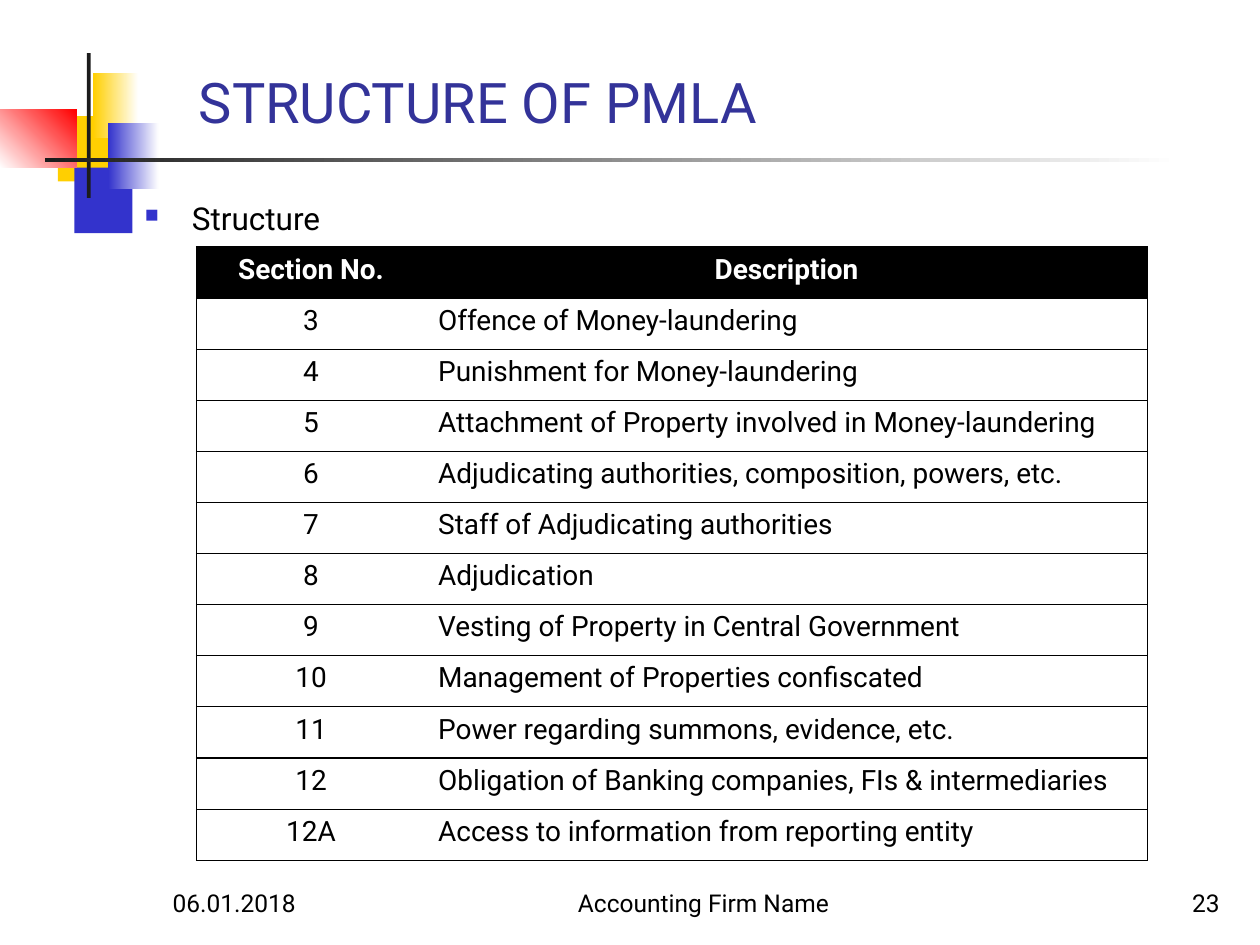
from dataclasses import dataclass
from typing import Optional

import pptx
import pptx.dml.color
import pptx.enum.shapes
import pptx.enum.text
import pptx.oxml
import pptx.oxml.ns
import pptx.util
from pptx.util import Cm, Pt

ALIGN = pptx.enum.text.PP_ALIGN
ANCHOR = pptx.enum.text.MSO_ANCHOR


@dataclass(frozen=True)
class Theme:
    font: str = "Roboto"
    black: str = "000000"
    white: str = "FFFFFF"
    charcoal: str = "1C1C1C"
    yellow: str = "FFCF01"
    blue: str = "3333CC"
    red: str = "FF0000"
    heading: str = "333399"
    title_size: int = 32
    body_size: int = 18
    table_size: int = 16
    footer_size: int = 14
    border: float = 0.75


THEME = Theme()


@dataclass(frozen=True)
class Box:
    left: float
    top: float
    width: float
    height: float

    def lengths(self) -> tuple:
        return Cm(self.left), Cm(self.top), Cm(self.width), Cm(self.height)


@dataclass(frozen=True)
class Block:
    box: Box
    color: str
    fade_to: Optional[str] = None
    angle: float = 0


@dataclass(frozen=True)
class Footer:
    text: str
    left: float
    width: float
    align: ALIGN


BLOCKS = [
    Block(Box(1.17, 2.34, 1.22, 1.32), THEME.yellow),
    Block(Box(1.5, 3.38, 1.17, 1.32), THEME.blue),
    Block(Box(1.88, 1.47, 0.91, 1.32), THEME.yellow, THEME.white),
    Block(Box(2.18, 2.49, 1.02, 1.32), THEME.blue, THEME.white),
    Block(Box(0, 2.21, 1.55, 1.17), THEME.white, THEME.red, 45),
    Block(Box(1.75, 1.07, 0.08, 2.92), THEME.charcoal),
    Block(Box(0.91, 3.18, 22.86, 0.08), THEME.charcoal, THEME.white),
]

FOOTERS = [
    Footer("06.01.2018", 3.23, 5.28, ALIGN.LEFT),
    Footer("Accounting Firm Name", 10.16, 8.05, ALIGN.CENTER),
    Footer("23", 19.56, 5.28, ALIGN.RIGHT),
]

SECTIONS = [
    ("Section No.", "Description"),
    ("3", "Offence of Money-laundering"),
    ("4", "Punishment for Money-laundering"),
    ("5", "Attachment of Property involved in Money-laundering"),
    ("6", "Adjudicating authorities, composition, powers, etc."),
    ("7", "Staff of Adjudicating authorities"),
    ("8", "Adjudication"),
    ("9", "Vesting of Property in Central Government"),
    ("10", "Management of Properties confiscated"),
    ("11", "Power regarding summons, evidence, etc."),
    ("12", "Obligation of Banking companies, FIs & intermediaries"),
    ("12A", "Access to information from reporting entity"),
]
COLUMN_WIDTHS = (4.62, 14.55)
ROW_HEIGHT = 1.03


def rgb(color: str) -> pptx.dml.color.RGBColor:
    return pptx.dml.color.RGBColor.from_string(color)


def xml(markup: str):
    return pptx.oxml.parse_xml(markup.replace(" ", f" {pptx.oxml.ns.nsdecls('a')} ", 1))


def write(frame, text: str, *, size: float, color: str = THEME.black,
          bold: bool = False, align: ALIGN = ALIGN.LEFT):
    """Put formatted text in the first paragraph and return that paragraph."""
    paragraph = frame.paragraphs[0]
    paragraph.alignment = align
    run = paragraph.add_run()
    run.text = text
    run.font.name = THEME.font
    run.font.size = Pt(size)
    run.font.bold = bold
    run.font.color.rgb = rgb(color)
    return paragraph


def add_text(slide, box: Box, text: str, anchor: ANCHOR = ANCHOR.BOTTOM, **text_format):
    frame = slide.shapes.add_textbox(*box.lengths()).text_frame
    frame.word_wrap = True
    frame.vertical_anchor = anchor
    return write(frame, text, **text_format)


def add_block(slide, block: Block) -> None:
    shape = slide.shapes.add_shape(
        pptx.enum.shapes.MSO_SHAPE.RECTANGLE, *block.box.lengths())
    shape.shadow.inherit = False
    shape.line.fill.background()
    if block.fade_to is None:
        shape.fill.solid()
        shape.fill.fore_color.rgb = rgb(block.color)
        return
    shape.fill.gradient()
    shape.fill.gradient_angle = block.angle
    for stop, color in zip(shape.fill.gradient_stops, (block.color, block.fade_to)):
        stop.color.rgb = rgb(color)


def add_bullet(paragraph, color: str) -> None:
    properties = paragraph._p.get_or_add_pPr()
    properties.set("marL", str(Cm(0.95)))
    properties.set("indent", str(-Cm(0.95)))
    for markup in (f'<a:buClr ><a:srgbClr val="{color}"/></a:buClr>',
                   '<a:buSzPct val="60000"/>',
                   '<a:buChar char="■"/>'):
        properties.append(xml(markup))


def set_borders(cell, visible: str) -> None:
    """Draw the sides named in visible (L, R, T, B) and clear the others."""
    properties = cell._tc.get_or_add_tcPr()
    for index, side in enumerate("LRTB"):
        paint = (f'<a:solidFill><a:srgbClr val="{THEME.black}"/></a:solidFill>'
                 if side in visible else "<a:noFill/>")
        properties.insert(index, xml(
            f'<a:ln{side} w="{Pt(THEME.border)}">{paint}</a:ln{side}>'))


def add_sections(slide) -> None:
    box = Box(3.96, 4.98, sum(COLUMN_WIDTHS), ROW_HEIGHT * len(SECTIONS))
    table = slide.shapes.add_table(
        len(SECTIONS), len(COLUMN_WIDTHS), *box.lengths()).table
    for column, width in zip(table.columns, COLUMN_WIDTHS):
        column.width = Cm(width)
    for row_index, section in enumerate(SECTIONS):
        table.rows[row_index].height = Cm(ROW_HEIGHT)
        header = row_index == 0
        for column_index, text in enumerate(section):
            cell = table.cell(row_index, column_index)
            if header:
                cell.fill.solid()
                cell.fill.fore_color.rgb = rgb(THEME.black)
            else:
                cell.fill.background()
            set_borders(cell, "LTB" if column_index == 0 else "RTB")
            centred = header or column_index == 0
            write(cell.text_frame, text, size=THEME.table_size, bold=header,
                  color=THEME.white if header else THEME.black,
                  align=ALIGN.CENTER if centred else ALIGN.LEFT)


def main() -> None:
    deck = pptx.Presentation()
    deck.slide_width, deck.slide_height = Cm(25.4), Cm(19.05)
    slide = deck.slides.add_slide(deck.slide_layouts[6])

    # Corner decoration
    for block in BLOCKS:
        add_block(slide, block)

    # Heading and lead line
    add_text(slide, Box(3.76, 1.27, 21.64, 1.57), "STRUCTURE OF PMLA",
             size=THEME.title_size, color=THEME.heading)
    lead = add_text(slide, Box(2.67, 3.89, 21.59, 13.59), "Structure",
                    anchor=ANCHOR.TOP, size=THEME.body_size)
    lead.space_before = Pt(0.2 * THEME.body_size)
    add_bullet(lead, THEME.blue)

    # Sections of the act
    add_sections(slide)

    # Footer
    for footer in FOOTERS:
        add_text(slide, Box(footer.left, 17.35, footer.width, 1.27), footer.text,
                 size=THEME.footer_size, align=footer.align)

    deck.save("out.pptx")


if __name__ == "__main__":
    main()
